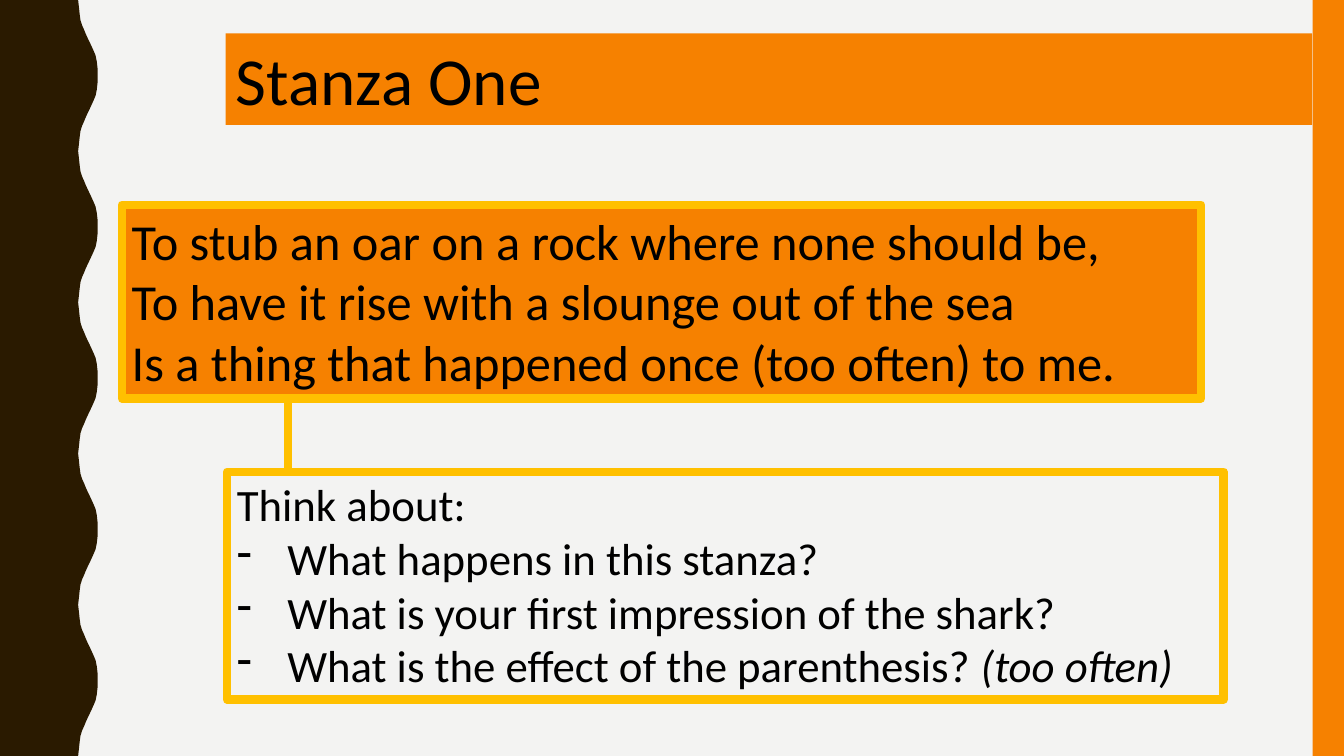
from dataclasses import dataclass
from typing import Optional

from lxml.etree import SubElement
from pptx import Presentation
from pptx.dml.color import RGBColor
from pptx.enum.shapes import MSO_CONNECTOR as CONN, MSO_SHAPE as SHAPE
from pptx.enum.text import MSO_ANCHOR as ANCHOR, PP_ALIGN as ALIGN
from pptx.oxml.ns import qn
from pptx.util import Cm, Pt

PAPER = RGBColor(0xF3, 0xF3, 0xF2)
BROWN = RGBColor(0x2A, 0x1A, 0x00)
ORANGE = RGBColor(0xF6, 0x81, 0x00)
GOLD = RGBColor(0xFF, 0xC0, 0x00)
BLACK = RGBColor(0x00, 0x00, 0x00)

FONT = "Calibri"
WIDTH, HEIGHT = 33.87, 19.05
BORDER = Pt(6)

# Half a wave of the left edge, as (x, y) in cm; the other half mirrors it.
PERIOD = 3.81
HALF_WAVE = [
    (1.97, 0), (1.99, 0.18), (2.01, 0.36), (2.03, 0.51), (2.07, 0.64),
    (2.12, 0.75), (2.16, 0.85), (2.21, 0.96), (2.26, 1.06), (2.31, 1.17),
    (2.36, 1.28), (2.41, 1.4), (2.44, 1.55), (2.46, 1.73), (2.46, 1.9),
]


@dataclass
class Line:
    text: str
    bullet: bool = False
    italic_end: str = ""


@dataclass
class Box:
    left: float
    top: float
    width: float
    height: float
    fill: Optional[RGBColor] = None
    border: Optional[RGBColor] = None
    size: int = 0
    lines: tuple[Line, ...] = ()


BAR = Box(33.08, 0, 0.79, HEIGHT, ORANGE)
POEM = Box(3.07, 5.16, 27.2, 4.88, ORANGE, GOLD, 36, (
    Line("To stub an oar on a rock where none should be,"),
    Line("To have it rise with a slounge out of the sea"),
    Line("Is a thing that happened once (too often) to me."),
))
TITLE = Box(5.69, 0.84, 27.38, 2.31, ORANGE, None, 48, (Line("Stanza One"),))
QUESTIONS = Box(5.72, 11.89, 25.12, 5.74, None, GOLD, 32, (
    Line("Think about:"),
    Line("What happens in this stanza?", True),
    Line("What is your first impression of the shark?", True),
    Line("What is the effect of the parenthesis? ", True, "(too often)"),
))
LINK_X = 7.26


def add_wave(slide) -> None:
    falling = [(x, PERIOD - y) for x, y in reversed(HALF_WAVE[1:-1])]
    wave = HALF_WAVE + falling
    edge = [(x, y + i * PERIOD) for i in range(5) for x, y in wave]
    outline = edge + [(HALF_WAVE[0][0], HEIGHT), (0, HEIGHT)]
    builder = slide.shapes.build_freeform(0, 0)
    builder.add_line_segments([(Cm(x), Cm(y)) for x, y in outline])
    sp = builder.convert_to_shape()
    sp.shadow.inherit = False
    sp.fill.solid()
    sp.fill.fore_color.rgb = BROWN
    sp.line.fill.background()


def add_bullet(p) -> None:
    """Give the paragraph a dash with a hanging indent."""
    pPr = p._p.get_or_add_pPr()
    pPr.set("marL", str(Cm(1.27)))
    pPr.set("indent", str(-Cm(1.27)))
    SubElement(pPr, qn("a:buFontTx"))
    SubElement(pPr, qn("a:buChar")).set("char", "-")


def write_lines(tf, box: Box) -> None:
    tf.word_wrap = True
    tf.vertical_anchor = ANCHOR.TOP
    for i, line in enumerate(box.lines):
        p = tf.add_paragraph() if i else tf.paragraphs[0]
        p.text = line.text
        p.alignment = ALIGN.LEFT
        if line.bullet:
            add_bullet(p)
        if line.italic_end:
            r = p.add_run()
            r.text = line.italic_end
            r.font.italic = True
        for r in p.runs:
            r.font.name = FONT
            r.font.size = Pt(box.size)
            r.font.color.rgb = BLACK


def add_box(slide, box: Box) -> None:
    sp = slide.shapes.add_shape(SHAPE.RECTANGLE, Cm(box.left), Cm(box.top),
                                Cm(box.width), Cm(box.height))
    sp.shadow.inherit = False
    if box.fill is None:
        sp.fill.background()
    else:
        sp.fill.solid()
        sp.fill.fore_color.rgb = box.fill
    if box.border is None:
        sp.line.fill.background()
    else:
        sp.line.color.rgb = box.border
        sp.line.width = BORDER
    if box.lines:
        write_lines(sp.text_frame, box)


def add_link(slide, x: float, upper: Box, lower: Box) -> None:
    """Join the bottom of one box to the top of another."""
    link = slide.shapes.add_connector(CONN.STRAIGHT, Cm(x), Cm(upper.top + upper.height),
                                      Cm(x), Cm(lower.top))
    link.line.color.rgb = GOLD
    link.line.width = BORDER
    SubElement(link._element.spPr, qn("a:effectLst"))


def main() -> None:
    prs = Presentation()
    prs.slide_width, prs.slide_height = Cm(WIDTH), Cm(HEIGHT)
    slide = prs.slides.add_slide(prs.slide_layouts[6])
    slide.background.fill.solid()
    slide.background.fill.fore_color.rgb = PAPER
    add_wave(slide)
    for box in (BAR, POEM, TITLE, QUESTIONS):
        add_box(slide, box)
    add_link(slide, LINK_X, POEM, QUESTIONS)
    prs.save("out.pptx")


if __name__ == "__main__":
    main()
